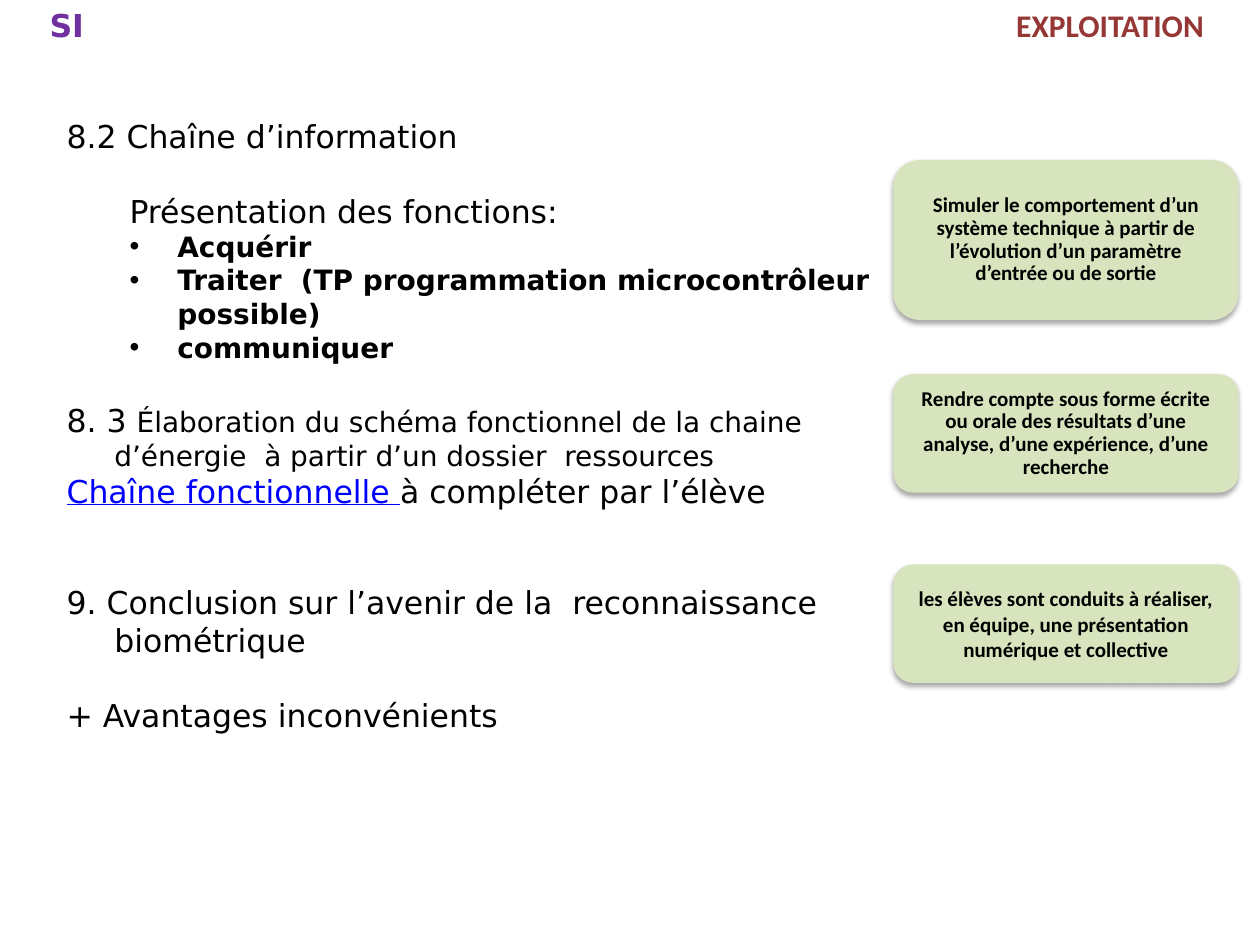
from lxml.etree import SubElement
from pptx import Presentation
from pptx.dml.color import RGBColor
from pptx.enum.shapes import MSO_SHAPE
from pptx.enum.text import MSO_ANCHOR, PP_ALIGN
from pptx.oxml.ns import qn
from pptx.util import Inches, Pt

BODY_FONT, CARD_FONT = "DejaVu Sans", "Calibri"
BLACK, BLUE, GREEN = "000000", "0000FF", "D7E4BD"
LARGE, SMALL = {"size": 18}, {"size": 16}
BOLD = {"size": 16, "bold": True}
LINK = {"size": 18, "color": BLUE, "underline": True}
HANGING, LINE_GAP = 0.38, 21

HEADERS = [
    ("EXPLOITATION", (7.62, 0, 2.38, 0.4), CARD_FONT, "953735"),
    ("SI", (0, 0, 1.06, 0.4), BODY_FONT, "7030A0"),
]
BODY_BOX = (0.43, 0.88, 6.66, 5.08)
BODY = [
    {"runs": [("8.2 Chaîne d’information", LARGE)]},
    {"runs": [("Présentation des fonctions:", LARGE)], "margin": 0.88, "gap": 1},
    {"runs": [("Acquérir", BOLD)], "margin": 0.88, "bullet": "•"},
    {"runs": [("Traiter  (TP programmation microcontrôleur possible)", BOLD)],
     "margin": 0.88, "bullet": "•"},
    {"runs": [("communiquer", BOLD)], "margin": 0.88, "bullet": "•"},
    {"runs": [("8. 3 ", LARGE),
              ("Élaboration du schéma fonctionnel de la chaine d’énergie  "
               "à partir d’un dossier  ressources", SMALL)], "gap": 1},
    {"runs": [("Chaîne fonctionnelle ", LINK), ("à compléter par l’élève", LARGE)]},
    {"runs": [("9. Conclusion sur l’avenir de la  reconnaissance biométrique", LARGE)],
     "gap": 2},
    {"runs": [("+ Avantages inconvénients", LARGE)], "gap": 1},
]
CARD_LEFT, CARD_WIDTH = 7.09, 2.74
CARDS = [
    (1.27, 1.27, 0.9, ["Simuler le comportement d’un système technique à partir de "
                       "l’évolution d’un paramètre d’entrée ou de sortie"]),
    (2.97, 0.94, 0.9, ["Rendre compte sous forme écrite ou orale des résultats d’une "
                       "analyse, d’une expérience, d’une recherche"]),
    (4.48, 0.94, 1.0, ["les élèves sont conduits à réaliser, en équipe, une présentation",
                       "numérique et collective"]),
]


def add_run(paragraph, text, font=BODY_FONT, size=18, color=BLACK, **formats):
    """Append a formatted run to a paragraph."""
    run = paragraph.add_run()
    run.text = text
    run.font.color.rgb = RGBColor.from_string(color)
    for name, value in {"name": font, "size": Pt(size), **formats}.items():
        setattr(run.font, name, value)


def add_text_box(slide, box):
    """Add a wrapping text box and return its text frame."""
    text_frame = slide.shapes.add_textbox(*map(Inches, box)).text_frame
    text_frame.word_wrap = True
    return text_frame


def next_paragraph(text_frame, index):
    """Return the first paragraph, or a new one after it."""
    return text_frame.add_paragraph() if index else text_frame.paragraphs[0]


def add_body(slide):
    """Write the outline with hanging indents, bullets and gaps."""
    text_frame = add_text_box(slide, BODY_BOX)
    for index, item in enumerate(BODY):
        paragraph = next_paragraph(text_frame, index)
        paragraph.space_before = Pt(LINE_GAP * item.get("gap", 0))
        properties = paragraph._p.get_or_add_pPr()
        properties.set("marL", str(Inches(item.get("margin", HANGING))))
        properties.set("indent", str(-Inches(HANGING)))
        if "bullet" in item:
            SubElement(properties, qn("a:buFont"), typeface="Arial")
            SubElement(properties, qn("a:buChar"), char=item["bullet"])
        for text, formats in item["runs"]:
            add_run(paragraph, text, **formats)


def add_soft_shadow(shape):
    """Give a shape a faint shadow falling straight down."""
    effects = SubElement(shape._element.spPr, qn("a:effectLst"))
    shadow = SubElement(effects, qn("a:outerShdw"), blurRad=str(Pt(3.1)),
                        dist=str(Pt(1.8)), dir="5400000", rotWithShape="0")
    color = SubElement(shadow, qn("a:srgbClr"), val=BLACK)
    SubElement(color, qn("a:alpha"), val="35000")


def add_card(slide, top, height, line_spacing, texts):
    """Add a rounded green card with centred bold text."""
    box = (CARD_LEFT, top, CARD_WIDTH, height)
    shape = slide.shapes.add_shape(MSO_SHAPE.ROUNDED_RECTANGLE, *map(Inches, box))
    shape.fill.solid()
    shape.fill.fore_color.rgb = RGBColor.from_string(GREEN)
    shape.line.fill.background()
    add_soft_shadow(shape)
    text_frame = shape.text_frame
    frame_formats = {"word_wrap": True, "vertical_anchor": MSO_ANCHOR.MIDDLE,
                     "margin_top": 0, "margin_bottom": 0}
    for name, value in frame_formats.items():
        setattr(text_frame, name, value)
    for index, text in enumerate(texts):
        paragraph = next_paragraph(text_frame, index)
        paragraph.alignment = PP_ALIGN.CENTER
        paragraph.line_spacing = line_spacing
        add_run(paragraph, text, CARD_FONT, 12, bold=True)


def main():
    """Build the slide and save it."""
    presentation = Presentation()
    presentation.slide_width, presentation.slide_height = Inches(10), Inches(7.5)
    slide = presentation.slides.add_slide(presentation.slide_layouts[6])
    add_body(slide)
    for card in CARDS:
        add_card(slide, *card)
    for text, box, font, color in HEADERS:
        paragraph = add_text_box(slide, box).paragraphs[0]
        paragraph.alignment = PP_ALIGN.CENTER
        add_run(paragraph, text, font, color=color, bold=True)
    presentation.save("out.pptx")


if __name__ == "__main__":
    main()
